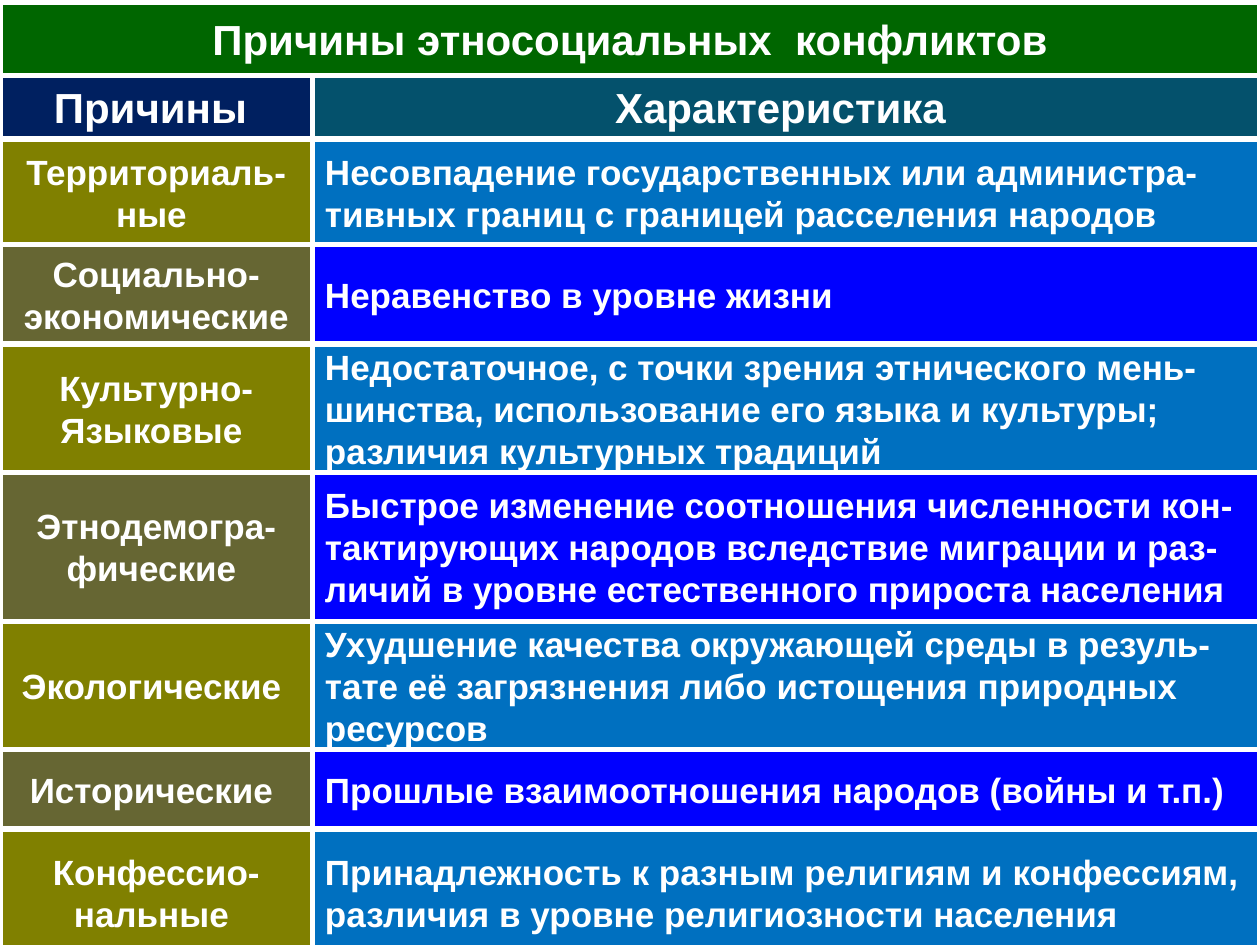
from pptx import Presentation
from pptx.dml.color import RGBColor
from pptx.enum.shapes import MSO_SHAPE
from pptx.enum.text import MSO_ANCHOR, PP_ALIGN
from pptx.util import Pt

RECT = MSO_SHAPE.RECTANGLE
MIDDLE = MSO_ANCHOR.MIDDLE
LEFT, CENTER = PP_ALIGN.LEFT, PP_ALIGN.CENTER


def rgb(value):
    return RGBColor.from_string(value)


def add_box(x, y, w, h, fill, text, size, align):
    sp = s.shapes.add_shape(RECT, Pt(x), Pt(y), Pt(w), Pt(h))
    sp.shadow.inherit = False
    sp.fill.solid()
    sp.fill.fore_color.rgb = rgb(fill)
    sp.line.color.rgb = rgb("FFFFFF")
    sp.line.width = Pt(3)
    tf = sp.text_frame
    tf.word_wrap = True
    tf.vertical_anchor = MIDDLE
    tf.text = text
    for p in tf.paragraphs:
        p.alignment = align
        for r in p.runs:
            r.font.name = "Arial"
            r.font.size = Pt(size)
            r.font.bold = True
            r.font.color.rgb = rgb("FFFFFF")


prs = Presentation()
prs.slide_width, prs.slide_height = Pt(720), Pt(540)
s = prs.slides.add_slide(prs.slide_layouts[6])

cause_w = 178.6
detail_w = 720 - cause_w

add_box(0, 1.4, 720, 41.8, "006600", "Причины этносоциальных  конфликтов", 24, CENTER)
add_box(0, 43.2, cause_w, 36, "002060", "Причины ", 24, CENTER)
add_box(cause_w, 43.2, detail_w, 36, "04516C", "Характеристика ", 24, CENTER)

rows = [
    (59.8, "Территориаль-ные ",
     "Несовпадение государственных или администра-тивных границ с границей расселения народов"),
    (56.9, "Социально-\nэкономические",
     "Неравенство в уровне жизни"),
    (73.4, "Культурно-\nЯзыковые ",
     "Недостаточное, с точки зрения этнического мень-шинства, использование его языка и культуры; "
     "различия культурных традиций"),
    (85, "Этнодемогра-фические ",
     "Быстрое изменение соотношения численности кон-тактирующих народов вследствие миграции "
     "и раз-личий в уровне естественного прироста населения"),
    (73.4, "Экологические ",
     "Ухудшение качества окружающей среды в резуль-тате её загрязнения либо истощения "
     "природных ресурсов"),
    (45.4, "Исторические ",
     "Прошлые взаимоотношения народов (войны и т.п.)"),
    (72, "Конфессио-нальные ",
     "Принадлежность к разным религиям и конфессиям, различия в уровне религиозности населения"),
]
row_fills = [("808000", "0070C0"), ("666633", "0000FF")]

y = 79.9
for i, (h, cause, detail) in enumerate(rows):
    cause_fill, detail_fill = row_fills[i % 2]
    add_box(0, y, cause_w, h, cause_fill, cause, 20, CENTER)
    add_box(cause_w, y, detail_w, h, detail_fill, detail, 20, LEFT)
    y += h

prs.save("out.pptx")
